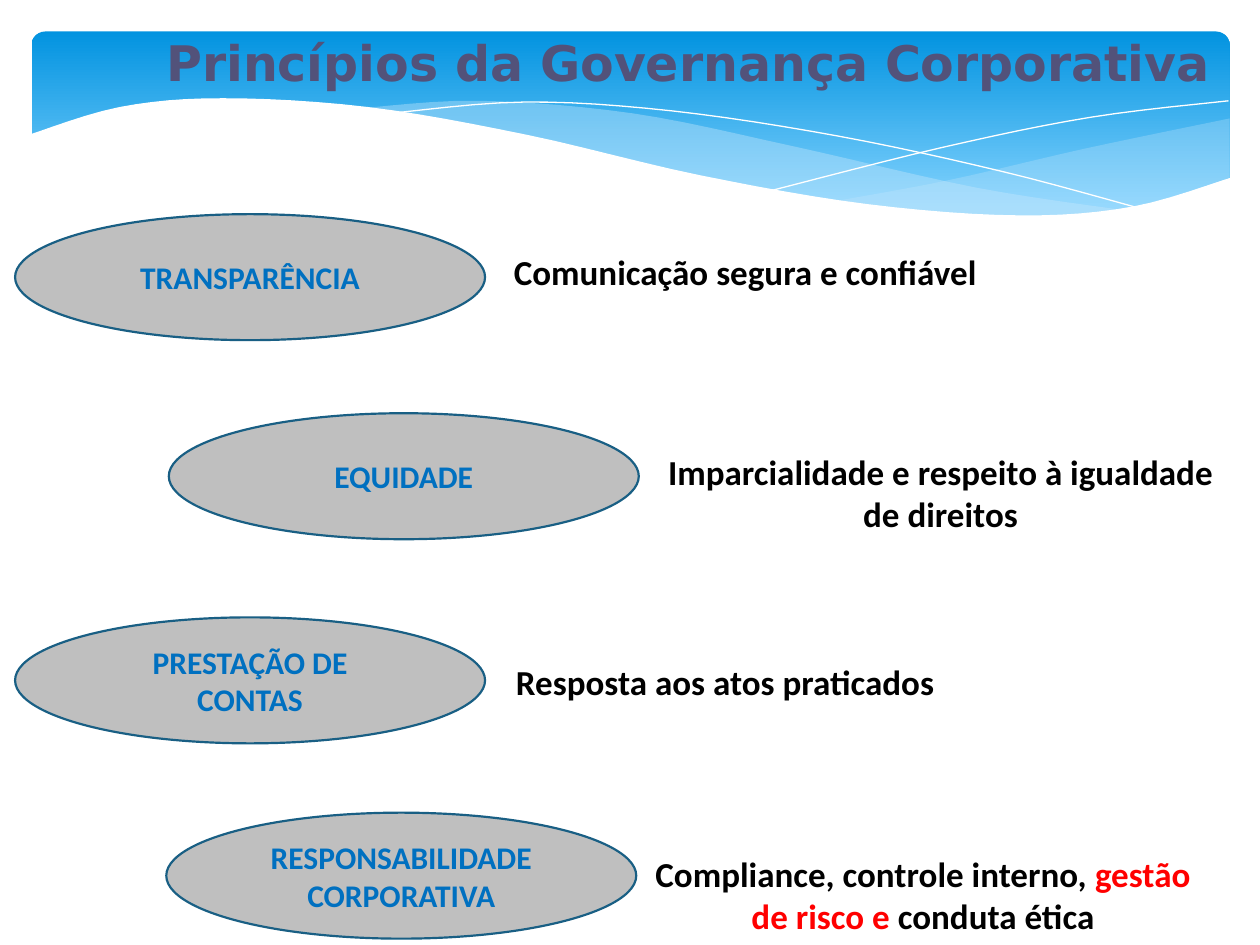
"""Builds the slide on the principles of corporate governance."""
import pptx
import pptx.dml.color
import pptx.enum.shapes
import pptx.enum.text
import pptx.oxml
import pptx.oxml.ns
import pptx.util

Inches, Pt = pptx.util.Inches, pptx.util.Pt
MSO = pptx.enum.shapes.MSO_SHAPE
ALIGN = pptx.enum.text.PP_ALIGN
ANCHOR = pptx.enum.text.MSO_ANCHOR

THEME = {
    "title": "52527A", "label": "0070C0", "text": "000000", "accent": "FF0000",
    "oval": "BFBFBF", "oval_line": "195F84", "paper": "FFFFFF", "wave": "C6E7FC",
    "band": [(0, "0293E0"), (0.9, "83D3FE")],
    "title_font": "DejaVu Sans", "body_font": "Calibri",
    "title_size": 28, "label_size": 18, "text_size": 20,
}

TITLE = "Princípios da Governança Corporativa"
OVAL_SIZE = (3.73, 1)
PRINCIPLES = [
    {"label": ["TRANSPARÊNCIA"], "oval": (0.12, 1.7), "box": (3.98, 1.94, 4.04, 0.44),
     "align": ALIGN.LEFT, "text": [[("Comunicação segura e confiável", "text")]]},
    {"label": ["EQUIDADE"], "oval": (1.34, 3.28), "box": (5.12, 3.53, 4.69, 0.77),
     "align": ALIGN.CENTER, "text": [[("Imparcialidade e respeito à igualdade", "text")],
                                     [("de direitos", "text")]]},
    {"label": ["PRESTAÇÃO DE", "CONTAS"], "oval": (0.12, 4.9), "box": (3.85, 5.19, 3.81, 0.44),
     "align": ALIGN.CENTER, "text": [[("Resposta aos atos praticados", "text")]]},
    {"label": ["RESPONSABILIDADE", "CORPORATIVA"], "oval": (1.32, 6.45), "box": (5, 6.72, 4.65, 0.77),
     "align": ALIGN.CENTER, "text": [[("Compliance, controle interno, ", "text"), ("gestão", "accent")],
                                     [("de risco e ", "accent"), ("conduta ética", "text")]]},
]

CURVE_STEPS = 6
WAVES = [
    {"fill": "wave", "alpha": 29, "curves": [
        [(9.76, 0.94), (8.61, 1.18), (7.53, 1.43), (6.61, 1.6)],
        [(6.61, 1.6), (7.32, 1.68), (8.14, 1.72), (8.97, 1.65), (9.76, 1.41)]]},
    {"fill": "wave", "alpha": 40, "curves": [
        [(8.93, 1.67), (7.75, 1.49), (6.29, 1.16), (5.02, 0.9), (3.8, 0.8), (2.86, 0.86)],
        [(2.86, 0.86), (4.04, 1.06), (5.66, 1.43), (6.95, 1.65), (8.07, 1.73), (8.93, 1.67)]]},
    {"line": "paper", "curves": [
        [(3.09, 0.9), (4.16, 0.81), (5.33, 0.88), (6.65, 1.08), (7.95, 1.36), (9.07, 1.66)]]},
    {"line": "paper", "curves": [
        [(6.13, 1.51), (7.48, 1.17), (8.66, 0.93), (9.75, 0.8)]]},
    {"fill": "paper", "curves": [
        [(9.77, 1.41), (8.99, 1.64), (8.09, 1.71), (6.88, 1.62), (5.55, 1.39), (4.18, 1.07),
         (2.92, 0.85), (1.77, 0.78), (0.95, 0.85), (0.23, 1.07)],
        [(0.23, 2.24)], [(9.77, 2.24)]]},
]


def rgb(name):
    return pptx.dml.color.RGBColor.from_string(THEME.get(name, name))


def inches(values):
    return [Inches(v) for v in values]


def smooth(anchors):
    """Return points on a Catmull-Rom curve through the anchors."""
    points = [anchors[0]]
    padded = [anchors[0], *anchors, anchors[-1]]
    for a, b, c, d in zip(padded, padded[1:], padded[2:], padded[3:]):
        for step in range(1, CURVE_STEPS + 1):
            t = step / CURVE_STEPS
            points.append(tuple(
                q + t * (r - p + t * (2 * p - 5 * q + 4 * r - s + t * (3 * (q - r) + s - p))) / 2
                for p, q, r, s in zip(a, b, c, d)))
    return points


def paint(sp, fill=None, line=None, width=0):
    sp.shadow.inherit = False
    if fill:
        sp.fill.solid()
        sp.fill.fore_color.rgb = rgb(fill)
    else:
        sp.fill.background()
    if line:
        sp.line.color.rgb = rgb(line)
        sp.line.width = Pt(width)
    else:
        sp.line.fill.background()


def write(tf, lines, size, align, font="body_font"):
    for i, runs in enumerate(lines):
        p = tf.add_paragraph() if i else tf.paragraphs[0]
        p.alignment = align
        p.font.name, p.font.size, p.font.bold = THEME[font], Pt(THEME[size]), True
        for text, color in runs:
            r = p.add_run()
            r.text = text
            r.font.color.rgb = rgb(color)


def add_band(slide):
    sp = slide.shapes.add_shape(MSO.ROUNDED_RECTANGLE, *inches((0.25, 0.25, 9.51, 1.56)))
    sp.adjustments[0] = 0.07
    paint(sp)
    sp.fill.gradient()
    sp.fill.gradient_angle = 270
    for stop, (position, color) in zip(sp.fill.gradient_stops, THEME["band"]):
        stop.position, stop.color.rgb = position, rgb(color)


def add_wave(slide, wave):
    points = [inches(point) for curve in wave["curves"] for point in smooth(curve)]
    builder = slide.shapes.build_freeform(*points[0])
    builder.add_line_segments(points[1:], close="fill" in wave)
    sp = builder.convert_to_shape()
    paint(sp, wave.get("fill"), wave.get("line"))
    if "alpha" in wave:
        color = sp.element.spPr.find(".//" + pptx.oxml.ns.qn("a:srgbClr"))
        color.append(pptx.oxml.parse_xml(
            f'<a:alpha {pptx.oxml.ns.nsdecls("a")} val="{wave["alpha"] * 1000}"/>'))


def add_title(slide):
    sp = slide.shapes.title
    sp.element.getparent().append(sp.element)
    sp.left, sp.top, sp.width, sp.height = inches((1.06, 0.21, 8.8, 1.04))
    tf = sp.text_frame
    tf.word_wrap = False
    tf.vertical_anchor = ANCHOR.TOP
    write(tf, [[(TITLE, "title")]], "title_size", ALIGN.CENTER, "title_font")


def add_principle(slide, item):
    sp = slide.shapes.add_shape(MSO.OVAL, *inches(item["oval"] + OVAL_SIZE))
    paint(sp, "oval", "oval_line", 1.25)
    sp.text_frame.vertical_anchor = ANCHOR.MIDDLE
    write(sp.text_frame, [[(line, "label")] for line in item["label"]], "label_size", ALIGN.CENTER)
    tf = slide.shapes.add_textbox(*inches(item["box"])).text_frame
    tf.word_wrap = False
    write(tf, item["text"], "text_size", item["align"])


def main():
    prs = pptx.Presentation()
    prs.slide_width, prs.slide_height = inches((10, 7.5))
    slide = prs.slides.add_slide(prs.slide_layouts[5])
    add_band(slide)
    for wave in WAVES:
        add_wave(slide, wave)
    add_title(slide)
    for item in PRINCIPLES:
        add_principle(slide, item)
    prs.save("out.pptx")


if __name__ == "__main__":
    main()
